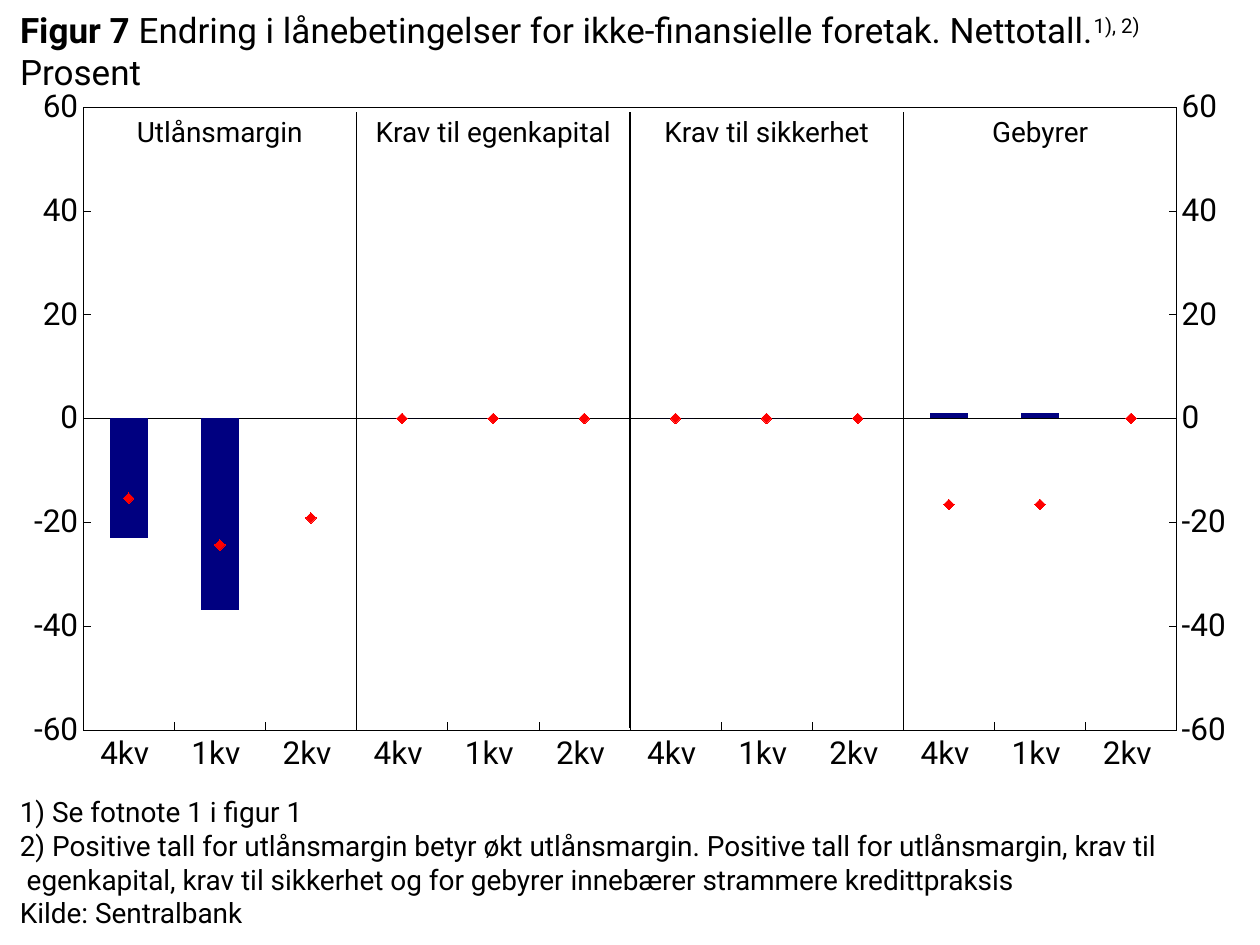
from copy import deepcopy

from lxml import etree
from pptx import Presentation
from pptx.chart.data import CategoryChartData
from pptx.dml.color import RGBColor
from pptx.enum.chart import XL_CHART_TYPE, XL_MARKER_STYLE, XL_TICK_LABEL_POSITION, XL_TICK_MARK
from pptx.enum.shapes import MSO_CONNECTOR
from pptx.enum.text import MSO_ANCHOR, MSO_AUTO_SIZE, PP_ALIGN
from pptx.oxml import parse_xml
from pptx.oxml.ns import nsdecls, qn
from pptx.util import Cm, Pt

COLUMNS = XL_CHART_TYPE.COLUMN_CLUSTERED
DIAMOND = XL_MARKER_STYLE.DIAMOND
NO_LABELS = XL_TICK_LABEL_POSITION.NONE
TICK_INSIDE, TICK_NONE = XL_TICK_MARK.INSIDE, XL_TICK_MARK.NONE
STRAIGHT = MSO_CONNECTOR.STRAIGHT
LEFT, CENTER = PP_ALIGN.LEFT, PP_ALIGN.CENTER
MIDDLE, BOTTOM = MSO_ANCHOR.MIDDLE, MSO_ANCHOR.BOTTOM

THEME = {
    "font": "Roboto", "chart_font": "Arial Narrow",
    "ink": RGBColor(0, 0, 0), "bar": RGBColor(0, 0, 0x80), "marker": RGBColor(0xFF, 0, 0),
    "title": Pt(20), "axis": Pt(18), "body": Pt(16),
    "axis_line": Pt(0.25), "divider": Pt(0.75),
}

TITLE = [
    ("Figur 7", True, False),
    (" Endring i lånebetingelser for ikke-finansielle foretak. Nettotall.", False, False),
    ("1), 2)", False, True),
    (" Prosent", False, False),
]
QUARTERS = ["4kv", "1kv", "2kv"]
PANELS = [
    ("Utlånsmargin", (-23, -37, None), (-15.4, -24.4, -19.2)),
    ("Krav til egenkapital", (0, 0, None), (0, 0, 0)),
    ("Krav til sikkerhet", (0, 0, None), (0, 0, 0)),
    ("Gebyrer", (1, 1, None), (-16.6, -16.6, 0)),
]
NOTES = [
    "1) Se fotnote 1 i figur 1",
    "2) Positive tall for utlånsmargin betyr økt utlånsmargin. Positive tall for utlånsmargin, krav til",
    " egenkapital, krav til sikkerhet og for gebyrer innebærer strammere kredittpraksis",
    "Kilde: Sentralbank",
]

CHART_BOX = (0, 1.78, 25.4, 14.5)
PLOT = {"x": 0.066, "y": 0.026, "w": 0.868, "h": 0.866}
PLOT_LEFT = CHART_BOX[2] * PLOT["x"]
PANEL_WIDTH = CHART_BOX[2] * PLOT["w"] / len(PANELS)
QUARTER_WIDTH = PANEL_WIDTH / len(QUARTERS)
DIVIDER_TOP, DIVIDER_BOTTOM = 2.26, 14.68


def style_font(font, size, name=THEME["font"]):
    font.name, font.size = name, size
    font.color.rgb = THEME["ink"]


def style_line(line, width):
    line.color.rgb = THEME["ink"]
    line.width = width


def add_text(slide, box, lines, size, alignment=LEFT, hanging=0):
    shape = slide.shapes.add_textbox(*map(Cm, box))
    frame = shape.text_frame
    frame.word_wrap = True
    if alignment == CENTER:
        frame.vertical_anchor = MIDDLE
        frame.margin_left = frame.margin_right = 0
    frame.text = "\n".join(lines)
    for paragraph in frame.paragraphs:
        paragraph.alignment = alignment
        style_font(paragraph.font, size)
        if hanging:
            properties = paragraph._p.get_or_add_pPr()
            properties.set("marL", str(Cm(hanging)))
            properties.set("indent", str(-Cm(hanging)))


def add_title(slide):
    title = slide.shapes.title
    title.left, title.top, title.width, title.height = map(Cm, (0.15, 0.25, 23.83, 1.75))
    frame = title.text_frame
    frame.word_wrap, frame.auto_size = True, MSO_AUTO_SIZE.NONE
    frame.vertical_anchor = BOTTOM
    paragraph = frame.paragraphs[0]
    paragraph.alignment = LEFT
    style_font(paragraph.font, THEME["title"])
    for text, bold, raised in TITLE:
        run = paragraph.add_run()
        run.text, run.font.bold = text, bold
        if raised:
            run.font._element.set("baseline", "30000")


def chart_data():
    data = CategoryChartData()
    count = len(PANELS) * len(QUARTERS)
    data.categories = [str(number + 1) for number in range(count)]
    for kind in (1, 2):
        for index, panel in enumerate(PANELS):
            values = [None] * count
            start = index * len(QUARTERS)
            values[start:start + len(QUARTERS)] = panel[kind]
            data.add_series(f"Series {(kind - 1) * len(PANELS) + index + 1}", values)
    return data


def move_to_right_axis(chart):
    plot_area = chart._chartSpace.chart.plotArea
    bars = plot_area.find(qn("c:barChart"))
    line_chart = parse_xml(
        f'<c:lineChart {nsdecls("c")}><c:grouping val="standard"/><c:varyColors val="0"/>'
        '<c:marker val="1"/><c:axId val="50010"/><c:axId val="50020"/></c:lineChart>')
    bars.addnext(line_chart)
    marker_switch = line_chart.find(qn("c:marker"))
    for series in bars.findall(qn("c:ser"))[len(PANELS):]:
        for invert in series.findall(qn("c:invertIfNegative")):
            series.remove(invert)
        marker_switch.addprevious(series)
    value_axis = plot_area.find(qn("c:valAx"))
    right_settings = {"axId": "50020", "crossAx": "50010", "axPos": "r", "crosses": "max"}
    bottom_settings = {"axId": "50010", "crossAx": "50020", "crosses": "min", "majorTickMark": "in"}
    axes = [(value_axis, right_settings), (plot_area.find(qn("c:catAx")), bottom_settings)]
    for axis, settings in axes:
        second = deepcopy(axis)
        for tag, value in settings.items():
            second.find(qn(f"c:{tag}")).set("val", value)
        value_axis.addnext(second)


def frame_plot(chart):
    plot_area = chart._chartSpace.chart.plotArea
    for layout in plot_area.findall(qn("c:layout")):
        plot_area.remove(layout)
    modes = '<c:layoutTarget val="inner"/><c:xMode val="edge"/><c:yMode val="edge"/>'
    sizes = "".join(f'<c:{key} val="{value}"/>' for key, value in PLOT.items())
    plot_area.insert(0, parse_xml(
        f'<c:layout {nsdecls("c")}><c:manualLayout>{modes}{sizes}</c:manualLayout></c:layout>'))
    plot_area.append(parse_xml(
        f'<c:spPr {nsdecls("c", "a")}><a:noFill/><a:ln w="{int(THEME["axis_line"])}"><a:solidFill>'
        f'<a:srgbClr val="{THEME["ink"]}"/></a:solidFill></a:ln></c:spPr>'))


def add_chart(slide):
    chart = slide.shapes.add_chart(COLUMNS, *map(Cm, CHART_BOX), chart_data()).chart
    chart.has_title = chart.has_legend = False
    style_font(chart.font, THEME["axis"], THEME["chart_font"])
    category_axis, value_axis = chart.category_axis, chart.value_axis
    category_axis.tick_label_position = NO_LABELS
    category_axis.major_tick_mark = TICK_NONE
    value_axis.major_tick_mark = TICK_INSIDE
    value_axis.minimum_scale, value_axis.maximum_scale, value_axis.major_unit = -60, 60, 20
    style_font(value_axis.tick_labels.font, THEME["axis"])
    for axis in (category_axis, value_axis):
        axis.has_major_gridlines = False
        axis.minor_tick_mark = TICK_NONE
        style_line(axis.format.line, THEME["axis_line"])
    move_to_right_axis(chart)
    frame_plot(chart)
    bars, markers = chart.plots
    bars.gap_width, bars.overlap, bars.vary_by_categories = 140, 100, False
    for series in bars.series:
        series.invert_if_negative = False
        series.format.fill.solid()
        series.format.fill.fore_color.rgb = THEME["bar"]
    for series in markers.series:
        series.smooth = False
        series.format.line.fill.background()
        series.marker.style, series.marker.size = DIAMOND, 6
        series.marker.format.fill.solid()
        series.marker.format.fill.fore_color.rgb = THEME["marker"]
        series.marker.format.line.color.rgb = THEME["marker"]


def add_panels(slide):
    for index, panel in enumerate(PANELS):
        left = PLOT_LEFT + index * PANEL_WIDTH
        add_text(slide, (left, 2.18, PANEL_WIDTH, 0.94), [panel[0]], THEME["body"], CENTER)
        for position, quarter in enumerate(QUARTERS):
            box = (left + position * QUARTER_WIDTH - 0.08, 14.71, QUARTER_WIDTH, 0.9)
            add_text(slide, box, [quarter], THEME["axis"], CENTER)
        if index:
            ends = (left, DIVIDER_BOTTOM, left, DIVIDER_TOP)
            divider = slide.shapes.add_connector(STRAIGHT, *map(Cm, ends))
            style_line(divider.line, THEME["divider"])
            etree.SubElement(divider._element.spPr, qn("a:effectLst"))


def main():
    """Build the slide on changes in lending terms for companies."""
    presentation = Presentation()
    presentation.slide_width, presentation.slide_height = Cm(25.4), Cm(19.05)
    slide = presentation.slides.add_slide(presentation.slide_layouts[5])
    add_chart(slide)
    add_panels(slide)
    add_text(slide, (0.15, 15.9, 23.62, 2.97), NOTES, THEME["body"], hanging=1.27)
    add_title(slide)
    presentation.save("out.pptx")


if __name__ == "__main__":
    main()
